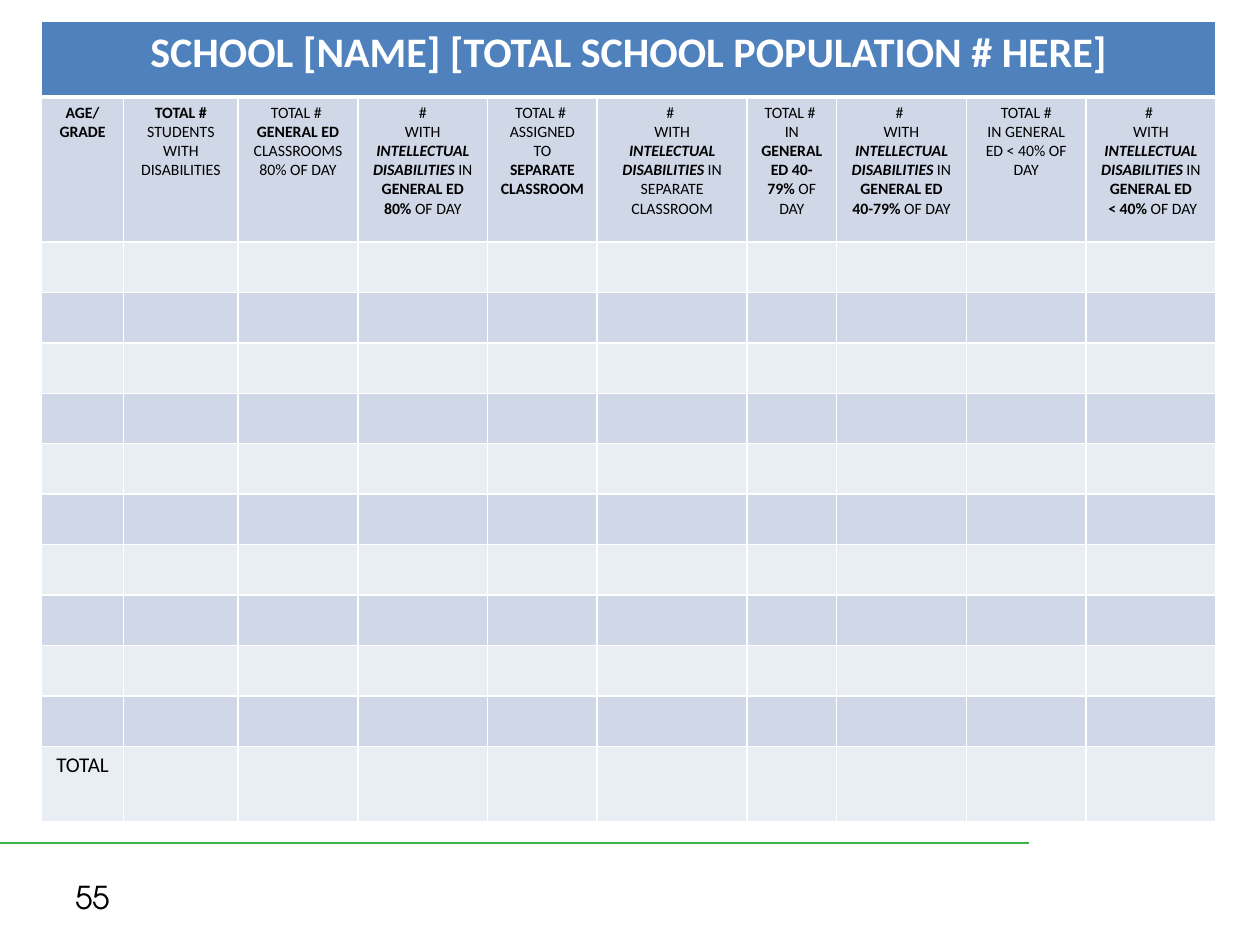
from lxml.etree import SubElement
from pptx import Presentation
from pptx.dml.color import RGBColor
from pptx.enum.shapes import MSO_CONNECTOR
from pptx.enum.text import MSO_ANCHOR, PP_ALIGN
from pptx.oxml.ns import qn
from pptx.util import Inches, Pt

WHITE, BLACK, GREEN = "FFFFFF", "000000", "39B54A"
TITLE_FILL, DARK_BAND, LIGHT_BAND = "4F81BD", "D0D8E8", "E9EDF4"

COL_WIDTHS = [0.65, 0.91, 0.95, 1.03, 0.87, 1.19, 0.71, 1.03, 0.95, 1.03]
ROW_HEIGHTS = [0.6, 1.15] + [0.4] * 10 + [0.6]

TITLE = [[("SCHOOL [NAME] [TOTAL SCHOOL POPULATION # HERE]", "b")]]
WITH_ID = [("WITH ", ""), ("INTELLECTUAL DISABILITIES ", "bi"), ("IN ", "")]

# Each heading is a list of paragraphs, each paragraph a list of (text, style)
HEADINGS = [
    [[("AGE/", "b")], [("GRADE", "b")]],
    [[("TOTAL # ", "b"), ("STUDENTS WITH DISABILITIES", "")]],
    [[("TOTAL # ", "")],
     [("GENERAL ED ", "b"), ("CLASSROOMS 80% OF DAY", "")]],
    [[("#", "")], WITH_ID + [("GENERAL ED 80% ", "b"), ("OF DAY", "")]],
    [[("TOTAL # ", "")],
     [("ASSIGNED TO ", ""), ("SEPARATE CLASSROOM", "b")]],
    [[("# ", "")],
     [("WITH ", ""), ("INTELECTUAL DISABILITIES ", "bi"),
      ("IN SEPARATE CLASSROOM", "")]],
    [[("TOTAL # ", "")],
     [("IN ", ""), ("GENERAL ED 40-79% ", "b"), ("OF DAY", "")]],
    [[("# ", "")], WITH_ID + [("GENERAL ED 40-79% ", "b"), ("OF DAY", "")]],
    [[("TOTAL #", "")], [("IN GENERAL ED < 40% OF DAY", "")]],
    [[("# ", "")], WITH_ID + [("GENERAL ED", "b")],
     [(" < 40% ", "b"), ("OF DAY", "")]],
]


def rgb(value):
    return RGBColor.from_string(value)


def add_text(tf, paragraphs, size, color=BLACK, font="Calibri",
             align=PP_ALIGN.CENTER):
    for i, runs in enumerate(paragraphs):
        p = tf.paragraphs[0] if i == 0 else tf.add_paragraph()
        p.alignment = align
        for text, style in runs:
            r = p.add_run()
            r.text = text
            r.font.name = font
            r.font.size = Pt(size)
            r.font.bold = "b" in style
            r.font.italic = "i" in style
            r.font.color.rgb = rgb(color)


def format_cell(cell, fill, top=1, bottom=1):
    tc_pr = cell._tc.get_or_add_tcPr()
    for side, width in (("L", 1), ("R", 1), ("T", top), ("B", bottom)):
        ln = SubElement(tc_pr, qn(f"a:ln{side}"), w=str(Pt(width)))
        solid = SubElement(ln, qn("a:solidFill"))
        SubElement(solid, qn("a:srgbClr"), val=WHITE)
    cell.fill.solid()
    cell.fill.fore_color.rgb = rgb(fill)


def add_school_table(s):
    frame = s.shapes.add_table(
        len(ROW_HEIGHTS), len(COL_WIDTHS), Inches(0.33), Inches(0.17),
        Inches(sum(COL_WIDTHS)), Inches(sum(ROW_HEIGHTS)))
    table = frame.table
    table.first_row = table.horz_banding = False
    for column, width in zip(table.columns, COL_WIDTHS):
        column.width = Inches(width)
    for row, height in zip(table.rows, ROW_HEIGHTS):
        row.height = Inches(height)

    # Fills and borders: title row, then alternating bands
    for i, row in enumerate(table.rows):
        for cell in row.cells:
            if i == 0:
                format_cell(cell, TITLE_FILL, bottom=3)
            else:
                format_cell(cell, DARK_BAND if i % 2 else LIGHT_BAND,
                            top=3 if i == 1 else 1)

    # Title, column headings and total label
    title = table.cell(0, 0)
    title.merge(table.cell(0, len(COL_WIDTHS) - 1))
    add_text(title.text_frame, TITLE, 24, WHITE)
    for i, heading in enumerate(HEADINGS):
        add_text(table.cell(1, i).text_frame, heading, 9)
    total = table.cell(len(ROW_HEIGHTS) - 1, 0)
    add_text(total.text_frame, [[("TOTAL", "")]], 12)


def add_rule(s, x1, x2, y, color, width):
    line = s.shapes.add_connector(MSO_CONNECTOR.STRAIGHT, Inches(x1),
                                  Inches(y), Inches(x2), Inches(y))
    line.line.color.rgb = rgb(color)
    line.line.width = Pt(width)
    SubElement(line._element.spPr, qn("a:effectLst"))


def add_page_number(s, number):
    box = s.shapes.add_textbox(Inches(0.5), Inches(6.92),
                               Inches(2.33), Inches(0.4))
    tf = box.text_frame
    tf.word_wrap = True
    tf.vertical_anchor = MSO_ANCHOR.MIDDLE
    add_text(tf, [[(number, "")]], 18, font="TeX Gyre Adventor",
             align=PP_ALIGN.LEFT)


def main():
    prs = Presentation()
    prs.slide_width, prs.slide_height = Inches(10), Inches(7.5)
    s = prs.slides.add_slide(prs.slide_layouts[6])

    # Footer
    add_rule(s, 0, 8.17, 6.69, GREEN, 1.5)
    add_page_number(s, "55")

    # School data table
    add_school_table(s)
    prs.save("out.pptx")


if __name__ == "__main__":
    main()
